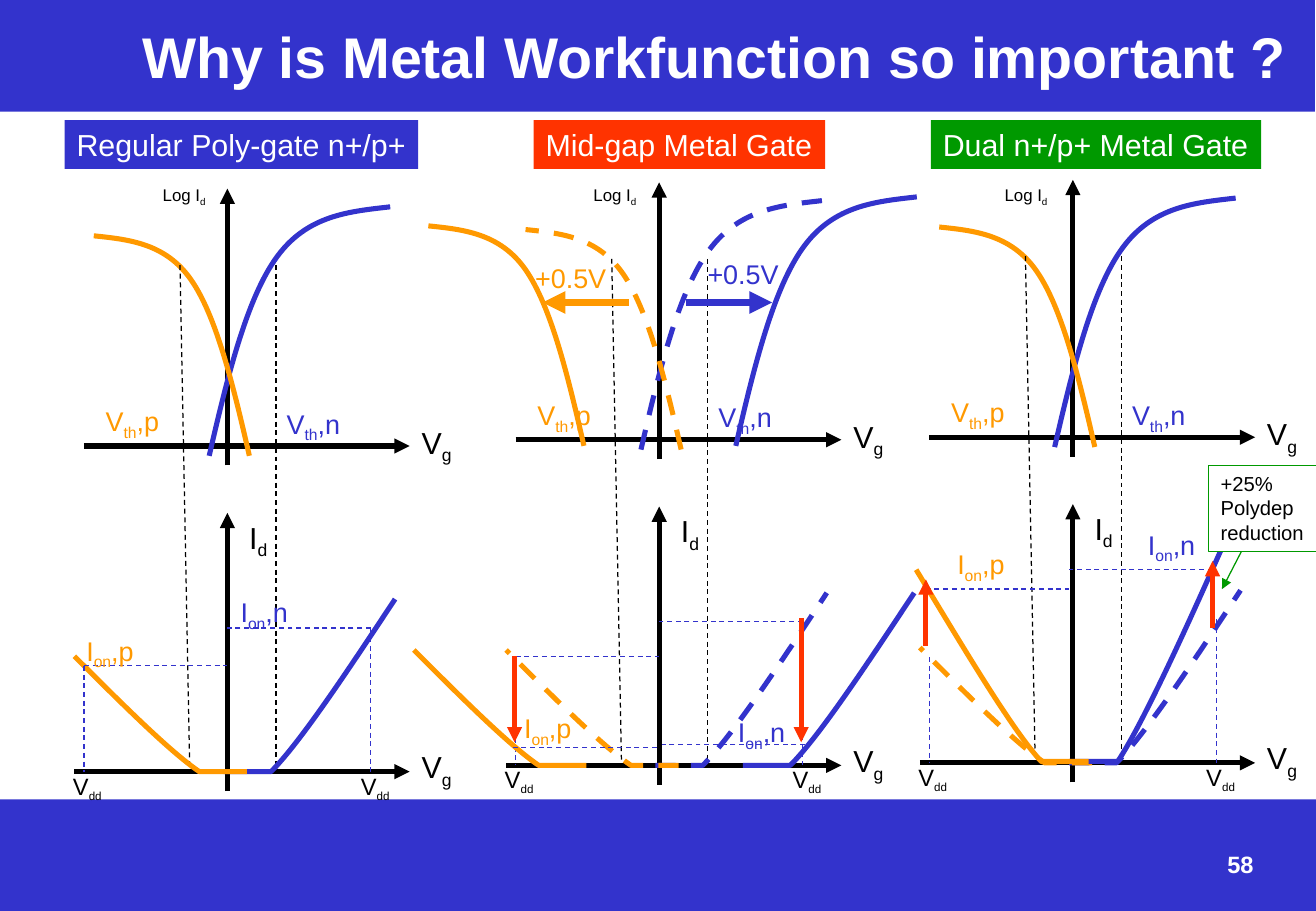
from dataclasses import dataclass
from typing import NamedTuple, Optional

from lxml.etree import SubElement
from pptx import Presentation
from pptx.dml.color import RGBColor as Rgb
from pptx.enum.dml import MSO_LINE
from pptx.enum.shapes import MSO_CONNECTOR, MSO_SHAPE
from pptx.enum.text import MSO_ANCHOR, MSO_AUTO_SIZE, PP_ALIGN
from pptx.oxml.ns import qn
from pptx.util import Pt


@dataclass(frozen=True)
class Theme:
    font: str = "Arial"
    blue: Rgb = Rgb(0x33, 0x33, 0xCC)
    orange: Rgb = Rgb(0xFF, 0x99, 0x00)
    red: Rgb = Rgb(0xFF, 0x33, 0x00)
    green: Rgb = Rgb(0x00, 0x99, 0x00)
    black: Rgb = Rgb(0, 0, 0)
    white: Rgb = Rgb(0xFF, 0xFF, 0xFF)
    title: float = 34
    axis: float = 18
    label: float = 16
    small: float = 14
    note: float = 12
    tiny: float = 10
    thin: float = 0.75
    thick: float = 3
    shift: float = 4.5


class Point(NamedTuple):
    x: float
    y: float


class Box(NamedTuple):
    left: float
    top: float
    width: float
    height: float


class Curve(NamedTuple):
    corners: list[tuple[float, float]]
    bends: list[tuple[float, float]]  # two control points and an end point for each bend


@dataclass(frozen=True)
class Carrier:
    name: str
    color: Rgb
    transfer: Curve
    drive: Curve
    threshold: tuple[Point, Point]
    vth_at: Point
    vdd_x: float
    vdd_label_x: float
    supply_top: float


@dataclass(frozen=True)
class Panel:
    origin: Point  # where the axes of the upper chart cross
    caption: str
    caption_left: float
    caption_width: float
    log_left: float
    fill: Rgb
    transfer_dashed: bool
    drive_dashed: bool
    ion_levels: tuple[float, float]
    ion_labels: tuple[Point, Point]
    guide_shift: float = 0


T = Theme()
BASE = 193  # lower axis, measured down from the upper one
N = Carrier(
    "n", T.blue,
    Curve([(-10.8, 5.8)], [(0, -41), (11.5, -87.8), (29.5, -112.3), (47.5, -136.8), (72, -139), (96.5, -141.8)]),
    Curve([(-2.2, BASE), (25.9, BASE)], [(43.2, 175.7), (71.3, 133.2), (99.4, 90.7)]),
    (Point(28.8, -107.3), Point(28.8, BASE)), Point(28, -26.6), 85, 72, 108)
P = Carrier(
    "p", T.orange,
    Curve([(13, 5.8)], [(3.6, -35.3), (-6.5, -77), (-21.6, -98.6), (-36.7, -120.2), (-58.3, -122.4), (-79.2, -124.6)]),
    Curve([(11.5, BASE), (-16.6, BASE)], [(-33.8, 181.4), (-61.9, 153.4), (-90.7, 124.6)]),
    (Point(-28.1, -107.3), Point(-22.3, BASE)), Point(-79.2, -28.1), -85, -98.6, 130.3)
POLY = Panel(Point(134.8, 264.4), "Regular Poly-gate n+/p+", 38.3, 209.5, 89.4, T.blue, False, False,
             (107.8, 130.3), (Point(0.7, 85), Point(-90.7, 108)))
MIDGAP = Panel(Point(390.7, 260.7), "Mid-gap Metal Gate", 316.3, 172.8, 344.7, T.red, True, True,
               (107.8, 128.3), (Point(39.6, 159.8), Point(-87.1, 157.7)))
DUAL = Panel(Point(635.9, 259.2), "Dual n+/p+ Metal Gate", 551.7, 195.8, 588.4, T.green, False, True,
             (78.6, 90), (Point(37.4, 50.4), Point(-75.6, 61.9)), -2.2)

deck = Presentation()
deck.slide_width, deck.slide_height = Pt(780), Pt(540)
shapes = deck.slides.add_slide(deck.slide_layouts[6]).shapes


def write(box: Box, text: str, *, size: float, color: Rgb, sub_size: Optional[float] = None,
          bold: bool = False, align: PP_ALIGN = PP_ALIGN.LEFT, anchor: MSO_ANCHOR = MSO_ANCHOR.TOP,
          fill: Optional[Rgb] = None, line: Optional[Rgb] = None, wrap: bool = False) -> None:
    """Write lines of text; a part between underscores is a subscript."""
    if fill is None:
        holder = shapes.add_textbox(*map(Pt, box))
    else:
        holder = add_block(box, fill, line)
    frame = holder.text_frame
    frame.word_wrap = wrap
    frame.auto_size = MSO_AUTO_SIZE.NONE if wrap else MSO_AUTO_SIZE.SHAPE_TO_FIT_TEXT
    frame.vertical_anchor = anchor
    for row, content in enumerate(text.split("\n")):
        paragraph = frame.add_paragraph() if row else frame.paragraphs[0]
        paragraph.alignment = align
        for index, part in enumerate(content.split("_")):
            if not part:
                continue
            run = paragraph.add_run()
            run.text = part
            font = run.font
            font.name, font.bold, font.color.rgb = T.font, bold, color
            font.size = Pt(sub_size if index % 2 and sub_size else size)
            if index % 2:
                run._r.get_or_add_rPr().set("baseline", "-25000")


def add_block(box: Box, fill: Rgb, line: Optional[Rgb] = None):
    block = shapes.add_shape(MSO_SHAPE.RECTANGLE, *map(Pt, box))
    block.shadow.inherit = False
    block.fill.solid()
    block.fill.fore_color.rgb = fill
    if line is None:
        block.line.fill.background()
    else:
        block.line.color.rgb, block.line.width = line, Pt(T.thin)
    return block


def draw_line(origin: Point, start: tuple[float, float], end: tuple[float, float], color: Rgb,
              width: float, dashed: bool = False, arrow: bool = False) -> None:
    ends = [Pt(base + step) for point in (start, end) for base, step in zip(origin, point)]
    stroke = shapes.add_connector(MSO_CONNECTOR.STRAIGHT, *ends)
    stroke.line.color.rgb, stroke.line.width = color, Pt(width)
    if dashed:
        stroke.line.dash_style = MSO_LINE.DASH
    if arrow:
        SubElement(stroke.line._get_or_add_ln(), qn("a:tailEnd"), type="triangle")
    SubElement(stroke._element.spPr, qn("a:effectLst"))


def draw_curve(origin: Point, curve: Curve, color: Rgb, dashed: bool = False) -> None:
    placed = [(Pt(origin.x + x), Pt(origin.y + y)) for x, y in curve.corners + curve.bends]
    builder = shapes.build_freeform(*placed[0])
    builder.add_line_segments(placed[1:], close=False)
    outline = builder.convert_to_shape()
    # Every three segments after the corners become one cubic bend
    segments = list(outline._element.iter(qn("a:lnTo")))[len(curve.corners) - 1:]
    for first, second, third in zip(segments[::3], segments[1::3], segments[2::3]):
        first.tag = qn("a:cubicBezTo")
        for segment in (second, third):
            first.append(segment[0])
            segment.getparent().remove(segment)
    outline.shadow.inherit = False
    outline.fill.background()
    outline.line.color.rgb, outline.line.width = color, Pt(T.thick)
    if dashed:
        outline.line.dash_style = MSO_LINE.DASH


def moved(origin: Point, dx: float, dy: float) -> Point:
    return Point(origin.x + dx, origin.y + dy)


def draw_panel(panel: Panel) -> None:
    o = panel.origin
    # Axes of the upper and lower charts
    for start, end in (((-85, 0), (108, 0)), ((0, 11.5), (0, -152.6)),
                       ((-90.7, BASE), (108, BASE)), ((0, 204.5), (0, 39.6))):
        draw_line(o, start, end, T.black, T.thick, arrow=True)
    for top in (-16.6, 175.7):
        write(Box(*moved(o, 108, top), 33.1, 28.8), "V_g_", size=T.axis, color=T.black)
    write(Box(*moved(o, 5.8, 39.6), 25.9, 28.8), "I_d_", size=T.axis, color=T.black)
    write(Box(panel.log_left, 105.8, 40.3, 19.4), "Log I_d_", size=T.tiny, color=T.black)
    # Curves, guides and labels of each carrier
    for carrier, level, ion_at in zip((N, P), panel.ion_levels, panel.ion_labels):
        ink, x = carrier.color, carrier.vdd_x
        draw_curve(o, carrier.transfer, ink, panel.transfer_dashed)
        draw_line(o, *carrier.threshold, T.black, T.thin, dashed=True)
        draw_curve(o, carrier.drive, ink, panel.drive_dashed)
        draw_line(o, (x + panel.guide_shift, level), (panel.guide_shift, level), T.blue, T.thin, dashed=True)
        draw_line(o, (x, carrier.supply_top), (x, BASE), T.blue, T.thin, dashed=True)
        write(Box(*moved(o, *carrier.vth_at), 47.5, 26.6), f"V_th_,{carrier.name}", size=T.label, color=ink)
        write(Box(*moved(o, *ion_at), 44.6, 26.6), f"I_on_,{carrier.name}", size=T.label, color=ink)
        write(Box(*moved(o, carrier.vdd_label_x, 189.4), 33.1, 23.8), "V_dd_",
              size=T.small, sub_size=T.note, color=T.black)
    write(Box(panel.caption_left, 71.3, panel.caption_width, 28.8), panel.caption,
          size=T.axis, color=T.white, fill=panel.fill)


# Title and footer bands
add_block(Box(0, 473.8, 780, 66.2), T.blue)
write(Box(720.4, 500.4, 40.3, 24.5), "58", size=T.small, color=T.white, bold=True)
write(Box(-0.7, 0, 780, 66.2), "Why is Metal Workfunction so important ? ", size=T.title, color=T.white,
      bold=True, align=PP_ALIGN.RIGHT, anchor=MSO_ANCHOR.MIDDLE, fill=T.blue, wrap=True)

draw_panel(POLY)
draw_panel(MIDGAP)

# Threshold shift and drive loss of the mid-gap gate
mid = MIDGAP.origin
for carrier, transfer_dx, drive_dx, start_x, end_x, note_at, loss_x, loss_top, guide in (
        (N, 56.2, 51.8, 15.8, 67, (21.6, -111.6), 84.2, 105.8, ((86.4, 180.7), (1.4, 180.7))),
        (P, -57.6, -54.7, -18, -69.1, (-80.6, -109.4), -85.7, 128.2, ((-1.4, 182.2), (-86.4, 182.2)))):
    draw_curve(moved(mid, transfer_dx, -2.2), carrier.transfer, carrier.color)
    draw_curve(moved(mid, drive_dx, 0), carrier.drive, carrier.color)
    draw_line(mid, (start_x, -81.4), (end_x, -81.4), carrier.color, T.shift, arrow=True)
    write(Box(*moved(mid, *note_at), 56.9, 26.6), "+0.5V", size=T.label, color=carrier.color)
    draw_line(mid, *guide, T.blue, T.thin, dashed=True)
    draw_line(mid, (loss_x, loss_top), (loss_x, 179.3), T.red, T.thick, arrow=True)

draw_panel(DUAL)

# Drive gain of the dual metal gate
dual = DUAL.origin
GAIN_N = Curve([(-2.2, 192.2), (26.6, 192.2)], [(43.2, 167), (72, 103), (100.1, 38.9)])
GAIN_P = Curve([(9.4, 192.2), (-18.7, 192.2)], [(-36, 173.5), (-64.1, 126), (-92.9, 78.5)])
for carrier, gain, gain_x, bottom, top in ((N, GAIN_N, 82.8, 113, 73.4), (P, GAIN_P, -87.1, 123.8, 84.2)):
    draw_curve(dual, gain, carrier.color)
    draw_line(dual, (gain_x, bottom), (gain_x, top), T.red, T.thick, arrow=True)

# Callout
write(Box(716.4, 275.8, 64.1, 51.1), "+25%\nPolydep\nreduction", size=T.note, color=T.black,
      fill=T.white, line=T.green)
draw_line(Point(0, 0), (735.8, 326.9), (724.3, 349.2), T.green, T.thin, arrow=True)

deck.save("out.pptx")
